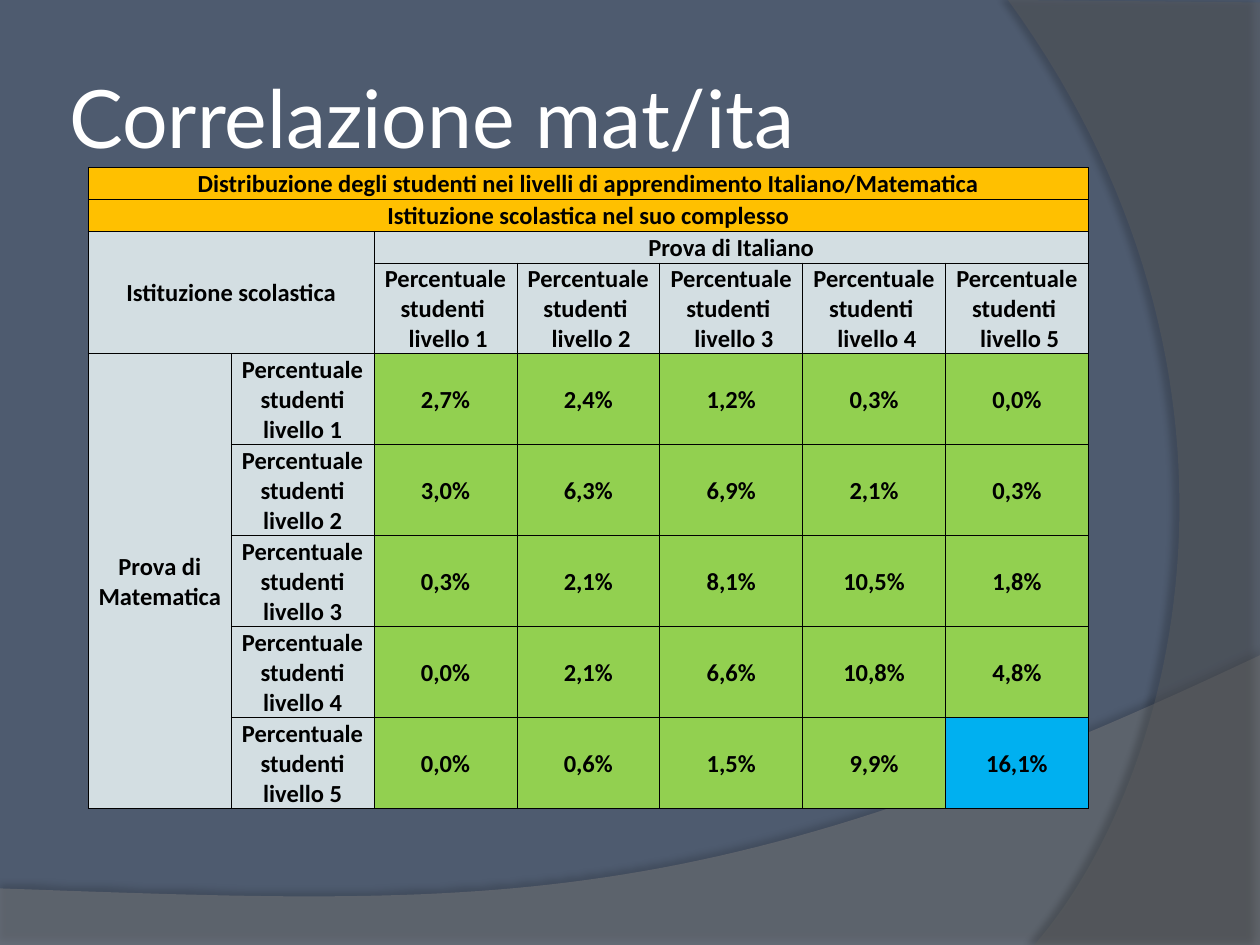
"""Build the slide that crosses Italian and Mathematics learning levels."""
import itertools
from dataclasses import dataclass

import lxml.etree
import pptx
import pptx.dml.color
import pptx.enum.text
import pptx.oxml
import pptx.oxml.ns
import pptx.util

Cm = pptx.util.Cm
Pt = pptx.util.Pt
qn = pptx.oxml.ns.qn
Point = tuple[float, float]


@dataclass(frozen=True)
class Theme:
    background: str = "4E5B6F"
    band: str = "7F7F7F"
    arc: str = "5E5E5E"
    title: str = "FFFFFF"
    ink: str = "000000"
    banner: str = "FFC000"
    header: str = "D3DEE2"
    value: str = "92D050"
    highlight: str = "00B0F0"
    title_font: str = "Lato"
    table_font: str = "Calibri"
    title_size: int = 46
    table_size: int = 14
    border_width: float = 0.5


@dataclass(frozen=True)
class Swoosh:
    corners: list[Point]
    controls: list[Point]
    color: str
    opacity: int
    shadow_opacity: int
    shadow_distance: float
    shadow_direction: int


@dataclass(frozen=True)
class Block:
    row: int
    column: int
    text: str
    color: str
    row_span: int = 1
    column_span: int = 1


THEME = Theme()
NAMESPACE = pptx.oxml.ns.nsdecls("a")
LEVELS = range(1, 6)
PERCENTAGES = [
    ["2,7%", "2,4%", "1,2%", "0,3%", "0,0%"],
    ["3,0%", "6,3%", "6,9%", "2,1%", "0,3%"],
    ["0,3%", "2,1%", "8,1%", "10,5%", "1,8%"],
    ["0,0%", "2,1%", "6,6%", "10,8%", "4,8%"],
    ["0,0%", "0,6%", "1,5%", "9,9%", "16,1%"],
]
ROW_HEIGHTS = [0.64] * 3 + [1.82] * 6
COLUMN_WIDTHS = [2.88] * 7
SWOOSHES = [
    Swoosh([(0, 17.91), (0, 19.05), (25.4, 19.05), (25.4, 13.21)],
           [(14.2, 18.52), (9.93, 18.26), (0, 17.91)], THEME.band, 45, 35, 3.5, 270),
    Swoosh([(25.4, 0.05), (25.4, 19.05), (20.85, 19.05)],
           [(23.75, 15.72), (25.86, 7.62), (20.32, 0)], THEME.arc, 40, 45, 4, 180),
]


def rgb(color: str) -> pptx.dml.color.RGBColor:
    """Turn a hexadecimal string into a colour."""
    return pptx.dml.color.RGBColor.from_string(color)


def curve_points(start: Point, controls: list[Point], steps: int = 60) -> list[Point]:
    """Sample a cubic curve after its start."""
    points = [start, *controls]
    weights = [1, 3, 3, 1]
    return [
        tuple(
            sum(weight * (1 - t) ** (3 - power) * t ** power * point[axis]
                for power, (weight, point) in enumerate(zip(weights, points)))
            for axis in (0, 1)
        )
        for t in (step / steps for step in range(1, steps + 1))
    ]


def draw_swoosh(slide: pptx.slide.Slide, swoosh: Swoosh) -> None:
    """Draw a translucent curved area with a soft shadow."""
    points = swoosh.corners + curve_points(swoosh.corners[-1], swoosh.controls)
    (start_x, start_y), *others = [(Cm(x), Cm(y)) for x, y in points]
    builder = slide.shapes.build_freeform(start_x, start_y)
    builder.add_line_segments(others, close=True)
    shape = builder.convert_to_shape()
    shape.fill.solid()
    shape.fill.fore_color.rgb = rgb(swoosh.color)
    shape.line.fill.background()
    color = next(shape.element.spPr.iter(qn("a:srgbClr")))
    lxml.etree.SubElement(color, qn("a:alpha"), val=str(swoosh.opacity * 1000))
    shape.element.spPr.append(pptx.oxml.parse_xml(
        f'<a:effectLst {NAMESPACE}><a:outerShdw blurRad="{Pt(4)}"'
        f' dist="{Pt(swoosh.shadow_distance)}" dir="{swoosh.shadow_direction * 60000}"'
        f' algn="ctr" rotWithShape="0"><a:srgbClr val="{THEME.ink}">'
        f'<a:alpha val="{swoosh.shadow_opacity * 1000}"/></a:srgbClr>'
        '</a:outerShdw></a:effectLst>'))


def format_text(text_frame: pptx.text.text.TextFrame, font: str, size: int, color: str,
                bold: bool, alignment: pptx.enum.text.PP_ALIGN) -> None:
    """Apply one look to all runs of a text frame."""
    for paragraph in text_frame.paragraphs:
        paragraph.alignment = alignment
        for run in paragraph.runs:
            run.font.name = font
            run.font.size = Pt(size)
            run.font.bold = bold
            run.font.color.rgb = rgb(color)


def write_title(slide: pptx.slide.Slide, text: str) -> None:
    """Fill the title placeholder and lift it above the swooshes."""
    title = slide.shapes.title
    title.left, title.top, title.width, title.height = Cm(1.27), Cm(0.76), Cm(20.75), Cm(3.18)
    frame = title.text_frame
    frame.text = text
    frame.word_wrap = True
    frame.auto_size = pptx.enum.text.MSO_AUTO_SIZE.NONE
    frame.vertical_anchor = pptx.enum.text.MSO_ANCHOR.MIDDLE
    frame.margin_left = frame.margin_right = frame.margin_top = frame.margin_bottom = Cm(0.13)
    format_text(frame, THEME.title_font, THEME.title_size, THEME.title, False,
                pptx.enum.text.PP_ALIGN.LEFT)
    slide.shapes.element.append(title.element)


def style_cell(cell: pptx.table._Cell, color: str) -> None:
    """Give a cell its borders, margins and fill."""
    cell.margin_left = cell.margin_right = cell.margin_top = Cm(0.03)
    cell.margin_bottom = Cm(0)
    cell.vertical_anchor = pptx.enum.text.MSO_ANCHOR.MIDDLE
    properties = cell.fill and cell._tc.get_or_add_tcPr()
    for side in "LRTB":
        properties.append(pptx.oxml.parse_xml(
            f'<a:ln{side} {NAMESPACE} w="{Pt(THEME.border_width)}"><a:solidFill>'
            f'<a:srgbClr val="{THEME.ink}"/></a:solidFill></a:ln{side}>'))
    cell.fill.solid()
    cell.fill.fore_color.rgb = rgb(color)


def write_block(table: pptx.table.Table, block: Block) -> None:
    """Style, merge and fill the cells of one block."""
    rows = range(block.row, block.row + block.row_span)
    columns = range(block.column, block.column + block.column_span)
    for row, column in itertools.product(rows, columns):
        style_cell(table.cell(row, column), block.color)
    cell = table.cell(block.row, block.column)
    if block.row_span * block.column_span > 1:
        cell.merge(table.cell(rows[-1], columns[-1]))
    cell.text_frame.text = block.text
    format_text(cell.text_frame, THEME.table_font, THEME.table_size, THEME.ink, True,
                pptx.enum.text.PP_ALIGN.CENTER)


def table_blocks() -> list[Block]:
    """List the banners, headings and percentages of the table."""
    blocks = [
        Block(0, 0, "Distribuzione degli studenti nei livelli di apprendimento Italiano/Matematica",
              THEME.banner, column_span=7),
        Block(1, 0, "Istituzione scolastica nel suo complesso", THEME.banner, column_span=7),
        Block(2, 0, "Istituzione scolastica", THEME.header, 2, 2),
        Block(2, 2, "Prova di Italiano", THEME.header, column_span=5),
        Block(4, 0, "Prova di Matematica", THEME.header, row_span=5),
    ]
    for level, values in zip(LEVELS, PERCENTAGES):
        blocks.append(Block(3, level + 1, f"Percentuale studenti \v livello {level}", THEME.header))
        blocks.append(Block(level + 3, 1, f"Percentuale studenti\vlivello {level}", THEME.header))
        for column, value in enumerate(values, start=2):
            color = THEME.highlight if value == "16,1%" else THEME.value
            blocks.append(Block(level + 3, column, value, color))
    return blocks


def draw_table(slide: pptx.slide.Slide) -> None:
    """Draw the table of learning levels."""
    frame = slide.shapes.add_table(len(ROW_HEIGHTS), len(COLUMN_WIDTHS), Cm(1.78), Cm(3.38),
                                   Cm(sum(COLUMN_WIDTHS)), Cm(sum(ROW_HEIGHTS)))
    table = frame.table
    table.first_row = table.horz_banding = False
    for row, height in zip(table.rows, ROW_HEIGHTS):
        row.height = Cm(height)
    for column, width in zip(table.columns, COLUMN_WIDTHS):
        column.width = Cm(width)
    for block in table_blocks():
        write_block(table, block)
    for line_break in frame.element.iter(qn("a:br")):
        lxml.etree.SubElement(line_break, qn("a:rPr"), sz=str(THEME.table_size * 100))


def main() -> None:
    """Build and save the presentation."""
    presentation = pptx.Presentation()
    presentation.slide_width, presentation.slide_height = Cm(25.4), Cm(19.05)
    slide = presentation.slides.add_slide(presentation.slide_layouts[5])
    slide.background.fill.solid()
    slide.background.fill.fore_color.rgb = rgb(THEME.background)
    for swoosh in SWOOSHES:
        draw_swoosh(slide, swoosh)
    write_title(slide, "Correlazione mat/ita")
    draw_table(slide)
    presentation.save("out.pptx")


if __name__ == "__main__":
    main()
